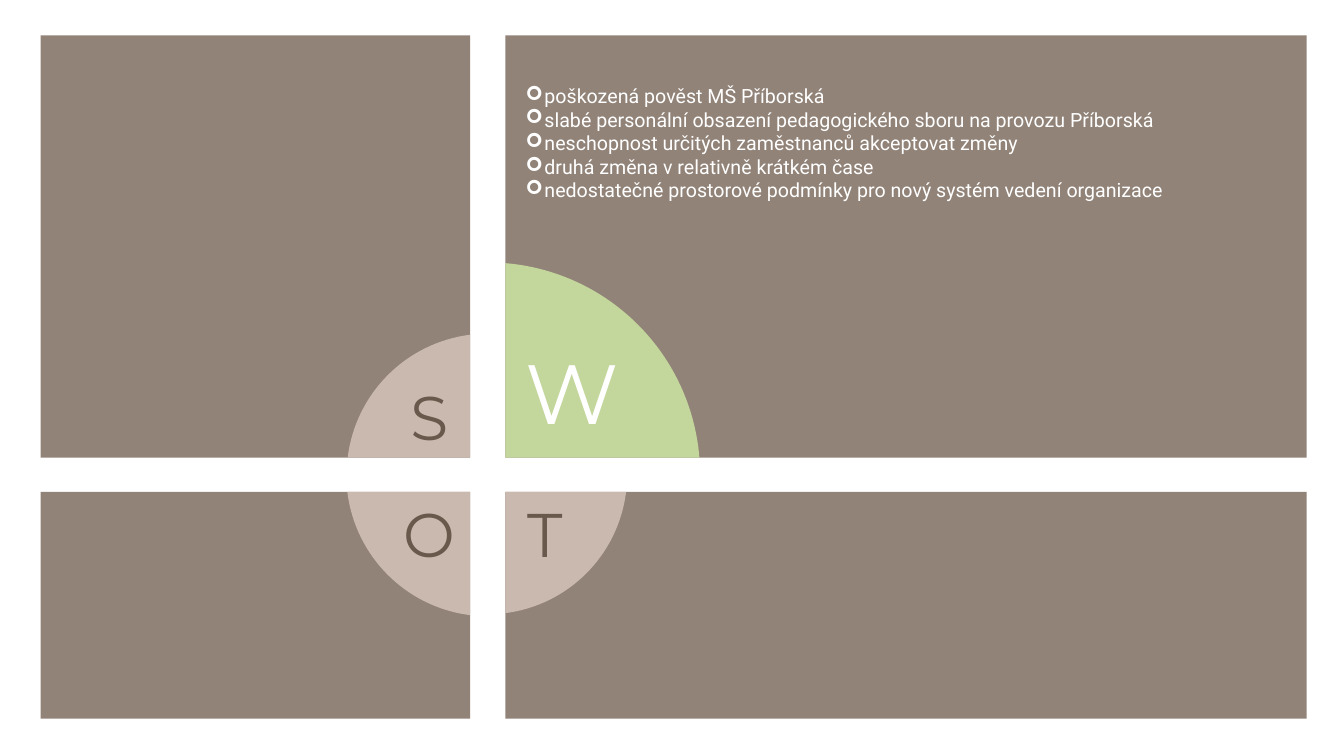
from math import acos, asin, cos, sin, tan
from pptx import Presentation
from pptx.dml.color import RGBColor
from pptx.enum.shapes import MSO_SHAPE
from pptx.enum.text import MSO_ANCHOR, MSO_AUTO_SIZE, PP_ALIGN
from pptx.oxml.ns import qn
from pptx.util import Pt
from lxml.etree import SubElement

LEFT, RIGHT = (29.1, 306.7), (361, 572.4)
UPPER, LOWER = (25.2, 301.7), (351.4, 162)
GAP_X = RIGHT[0] - sum(LEFT)
GAP_Y = LOWER[0] - sum(UPPER)
CENTRE_X = RIGHT[0] - GAP_X / 2
CENTRE_Y = LOWER[0] - GAP_Y / 2

WEAKNESSES = [
    "poškozená pověst MŠ Příborská",
    "slabé personální obsazení pedagogického sboru na provozu Příborská",
    "neschopnost určitých zaměstnanců akceptovat změny",
    "druhá změna v relativně krátkém čase",
    "nedostatečné prostorové podmínky pro nový systém vedení organizace",
]

QUADRANTS = [
    (1, 1, 99.6, "C9B9AF"),
    (-1, 1, 101, "C9B9AF"),
    (1, -1, 151.7, "C3D69B"),
    (-1, -1, 100.8, "C9B9AF"),
]

LETTERS = [
    ("T", (375.1, 353.9, 28.1, 53.3), 44, "69594D"),
    ("O", (287.3, 353.9, 38.2, 53.3), 44, "69594D"),
    ("W", (373, 242.6, 72, 72.7), 60, "FFFFFF"),
    ("S", (292.3, 270.7, 28.8, 53.3), 44, "69594D"),
]


def colour(code):
    return RGBColor.from_string(code)


def apply(target, formats):
    for name, value in formats.items():
        setattr(target, name, value)


class SwotPage:
    panel_fill = "928378"
    list_font = "Roboto"
    letter_font = "Montserrat"
    list_frame = {
        "word_wrap": True, "vertical_anchor": MSO_ANCHOR.TOP,
        "margin_left": Pt(14.4), "margin_top": Pt(34.8),
        "margin_right": Pt(7.2), "margin_bottom": Pt(6),
    }
    letter_frame = {
        "word_wrap": False, "auto_size": MSO_AUTO_SIZE.SHAPE_TO_FIT_TEXT,
        "vertical_anchor": MSO_ANCHOR.MIDDLE,
        "margin_left": 0, "margin_top": 0, "margin_right": 0, "margin_bottom": 0,
    }

    def __init__(self, page):
        self.page = page

    def paint(self, shape, fill):
        shape.fill.solid()
        shape.fill.fore_color.rgb = colour(fill)
        shape.line.fill.background()
        shape.shadow.inherit = False

    def panel(self, column, row):
        (left, width), (top, height) = column, row
        shape = self.page.shapes.add_shape(
            MSO_SHAPE.RECTANGLE, Pt(left), Pt(top), Pt(width), Pt(height))
        self.paint(shape, self.panel_fill)
        return shape

    def quadrant(self, side_x, side_y, radius, fill):
        def place(across, down):
            return Pt(CENTRE_X + side_x * across), Pt(CENTRE_Y + side_y * down)

        first = asin(GAP_Y / 2 / radius)
        last = acos(GAP_X / 2 / radius)
        pull = 4 / 3 * tan((last - first) / 4)

        def on_arc(angle, bend=0):
            return place(radius * (cos(angle) - bend * sin(angle)),
                         radius * (sin(angle) + bend * cos(angle)))

        builder = self.page.shapes.build_freeform(*place(GAP_X / 2, GAP_Y / 2))
        builder.add_line_segments([on_arc(first), on_arc(last)], close=True)
        shape = builder.convert_to_shape()
        self.paint(shape, fill)
        chord = shape._element.findall(".//" + qn("a:lnTo"))[1]
        curve = chord.makeelement(qn("a:cubicBezTo"), {})
        for x, y in (on_arc(first, pull), on_arc(last, -pull), on_arc(last)):
            SubElement(curve, qn("a:pt"),
                       {"x": str(x - shape.left), "y": str(y - shape.top)})
        chord.getparent().replace(chord, curve)

    def span(self, para, text, font, size, code):
        span = para.add_run()
        span.text = text
        apply(span.font, {"name": font, "size": Pt(size)})
        span.font.color.rgb = colour(code)

    def bullets(self, shape, lines):
        frame = shape.text_frame
        apply(frame, self.list_frame)
        for index, line in enumerate(lines):
            para = frame.add_paragraph() if index else frame.paragraphs[0]
            para.alignment = PP_ALIGN.LEFT
            self.span(para, line, self.list_font, 14, "FFFFFF")
            properties = para._p.get_or_add_pPr()
            properties.set("marL", str(Pt(13.5)))
            properties.set("indent", str(Pt(-13.5)))
            SubElement(properties, qn("a:buFont"), {"typeface": "Wingdings"})
            SubElement(properties, qn("a:buChar"), {"char": "➢"})

    def letter(self, text, place, size, code):
        box = self.page.shapes.add_textbox(*map(Pt, place))
        apply(box.text_frame, self.letter_frame)
        para = box.text_frame.paragraphs[0]
        para.alignment = PP_ALIGN.CENTER
        self.span(para, text, self.letter_font, size, code)


def main():
    deck = Presentation()
    apply(deck, {"slide_width": Pt(960), "slide_height": Pt(540)})
    swot = SwotPage(deck.slides.add_slide(deck.slide_layouts[6]))
    swot.panel(RIGHT, LOWER)
    swot.bullets(swot.panel(RIGHT, UPPER), WEAKNESSES)
    swot.panel(LEFT, UPPER)
    swot.panel(LEFT, LOWER)
    for quadrant in QUADRANTS:
        swot.quadrant(*quadrant)
    for letter in LETTERS:
        swot.letter(*letter)
    deck.save("out.pptx")


if __name__ == "__main__":
    main()
